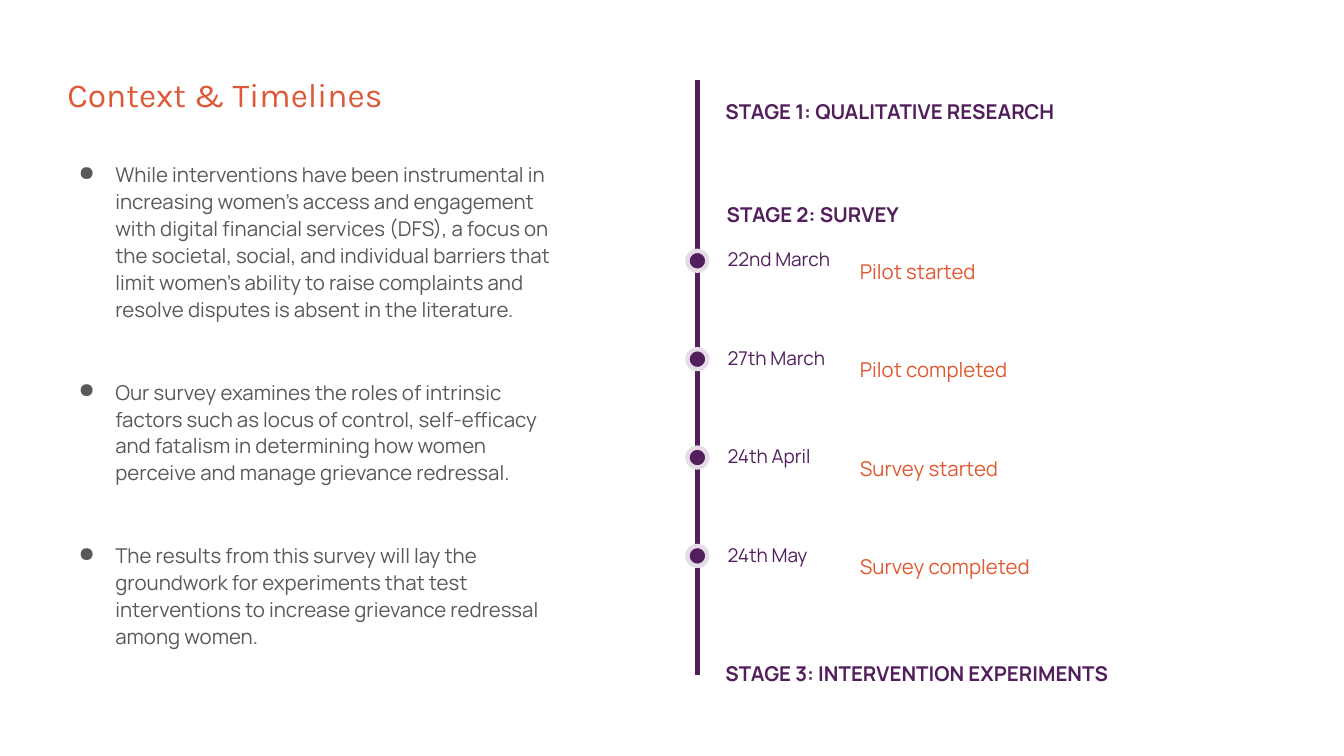
from lxml import etree
from pptx import Presentation
from pptx.dml.color import RGBColor
from pptx.enum.shapes import MSO_CONNECTOR, MSO_SHAPE
from pptx.enum.text import MSO_ANCHOR, MSO_AUTO_SIZE
from pptx.oxml.ns import qn
from pptx.util import Cm, Pt

PURPLE = RGBColor(0x52, 0x1F, 0x5C)
LILAC = RGBColor(0xE6, 0xDC, 0xE8)
ORANGE = RGBColor(0xE1, 0x58, 0x30)
TITLE_ORANGE = RGBColor(0xDD, 0x59, 0x38)
GREY = RGBColor(0x59, 0x59, 0x59)
ELLIPSE = MSO_SHAPE.OVAL
STRAIGHT = MSO_CONNECTOR.STRAIGHT
TOP, MIDDLE = MSO_ANCHOR.TOP, MSO_ANCHOR.MIDDLE
GROW, FIXED = MSO_AUTO_SIZE.SHAPE_TO_FIT_TEXT, MSO_AUTO_SIZE.NONE

AXIS_X = 16.87
DOT_SIZE = 0.48
FIRST_DOT_TOP = 6.07
MILESTONE_STEP = 2.38
NARROW_INSETS = (0.25, 0.13)
WIDE_INSETS = (0.33, 0.15)

CONTEXT_POINTS = [
    "While interventions have been instrumental in increasing women’s access and "
    "engagement with digital financial services (DFS), a focus on the societal, "
    "social, and individual barriers that limit women’s ability to raise complaints "
    "and resolve disputes is absent in the literature.",
    "Our survey examines the roles of intrinsic factors such as locus of control, "
    "self-efficacy and fatalism in determining how women perceive and manage "
    "grievance redressal.",
    "The results from this survey will lay the groundwork for experiments that test "
    "interventions to increase grievance redressal among women.",
]
STAGES = [
    ("STAGE 1: QUALITATIVE RESEARCH", 17.22, 1.96),
    ("STAGE 2: SURVEY", 17.25, 4.44),
    ("STAGE 3: INTERVENTION EXPERIMENTS", 17.22, 15.54),
]
MILESTONES = [
    ("22nd March", "Pilot started"),
    ("27th March", "Pilot completed"),
    ("24th April", "Survey started"),
    ("24th May", "Survey completed"),
]


def add_bullet(para):
    """Give a paragraph a hanging round bullet."""
    properties = para._p.get_or_add_pPr()
    properties.set("marL", str(Cm(1.27)))
    properties.set("indent", str(-Cm(0.89)))
    colour = etree.SubElement(properties, qn("a:buClr"))
    etree.SubElement(colour, qn("a:srgbClr")).set("val", str(GREY))
    etree.SubElement(properties, qn("a:buChar")).set("char", "●")


def add_text(slide, text, left, top, width, height, *, size=14, font="Manrope",
             colour=PURPLE, bold=False, insets=WIDE_INSETS, spacing=1.5,
             anchor=TOP, fit=GROW, bullets=False, gap=0):
    """Add a text box holding one paragraph for each line of text."""
    box = slide.shapes.add_textbox(Cm(left), Cm(top), Cm(width), Cm(height))
    frame = box.text_frame
    frame.word_wrap = True
    frame.auto_size = fit
    frame.vertical_anchor = anchor
    frame.margin_left = frame.margin_right = Cm(insets[0])
    frame.margin_top = frame.margin_bottom = Cm(insets[1])
    for index, line in enumerate(text.split("\n")):
        para = frame.add_paragraph() if index else frame.paragraphs[0]
        if bullets:
            add_bullet(para)
        para.line_spacing = spacing
        if index:
            para.space_before = Pt(gap)
        span = para.add_run()
        span.text = line
        span.font.size = Pt(size)
        span.font.name = font
        span.font.bold = bold
        span.font.color.rgb = colour


def add_axis(slide):
    """Draw the vertical line of the timeline."""
    axis = slide.shapes.add_connector(
        STRAIGHT, Cm(AXIS_X), Cm(1.93), Cm(AXIS_X), Cm(16.33))
    axis.line.color.rgb = PURPLE
    axis.line.width = Pt(3)
    etree.SubElement(axis._element.spPr, qn("a:effectLst"))


def add_milestone(slide, date, event, dot_top):
    """Add a dot on the timeline with its date and event."""
    dot = slide.shapes.add_shape(ELLIPSE, Cm(AXIS_X - DOT_SIZE / 2), Cm(dot_top),
                                 Cm(DOT_SIZE), Cm(DOT_SIZE))
    dot.shadow.inherit = False
    dot.fill.solid()
    dot.fill.fore_color.rgb = PURPLE
    dot.line.color.rgb = LILAC
    dot.line.width = Pt(3)
    add_text(slide, date, 17.35, dot_top - 0.2, 3.18, 0.81, size=13,
             insets=NARROW_INSETS, spacing=1.0)
    add_text(slide, event, 20.47, dot_top - 0.25, 11.02, 0.91, colour=ORANGE)


def main():
    """Build the context and timelines slide."""
    deck = Presentation()
    deck.slide_width, deck.slide_height = Cm(32.51), Cm(18.29)
    page = deck.slides.add_slide(deck.slide_layouts[6])
    add_text(page, "Context & Timelines", 1.63, 0.74, 14.88, 3.05, size=23,
             font="Karla", colour=TITLE_ORANGE, insets=(0, 0), spacing=1.0,
             anchor=MIDDLE, fit=FIXED)
    add_text(page, "\n".join(CONTEXT_POINTS), 1.27, 3.73, 12.78, 12.17,
             colour=GREY, insets=NARROW_INSETS, spacing=1.1, bullets=True, gap=38.4)
    add_axis(page)
    for stage, left, top in STAGES:
        add_text(page, stage, left, top, 11.02, 0.91, bold=True)
    for index, (date, event) in enumerate(MILESTONES):
        add_milestone(page, date, event, FIRST_DOT_TOP + index * MILESTONE_STEP)
    deck.save("out.pptx")


if __name__ == "__main__":
    main()
